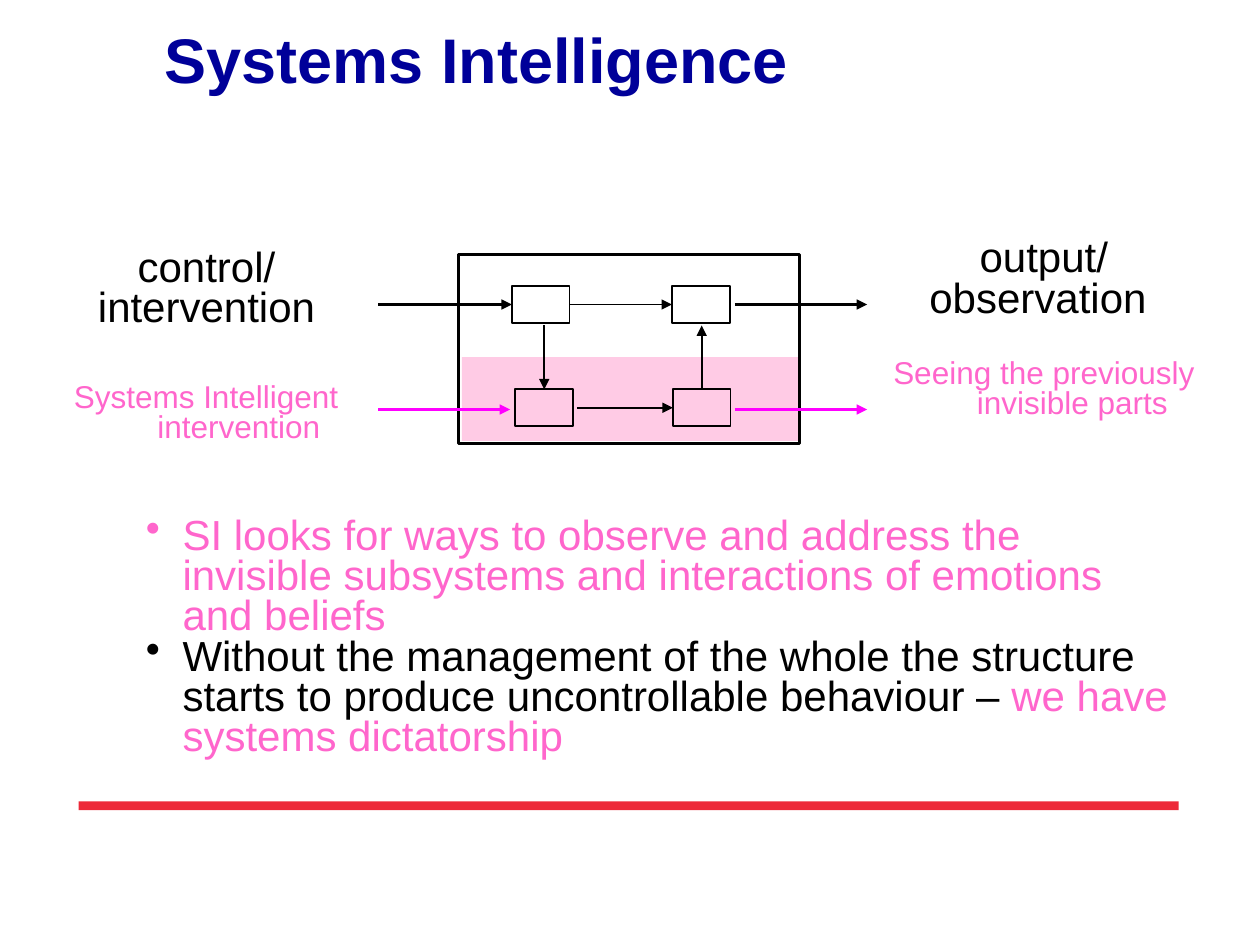
from lxml import etree
from pptx import Presentation
from pptx import util as u
from pptx.dml.color import RGBColor
from pptx.enum import shapes, text
from pptx.oxml.ns import qn

Pt = u.Pt
BLACK = RGBColor(0x00, 0x00, 0x00)
NAVY = RGBColor(0x00, 0x00, 0x99)
PINK = RGBColor(0xFF, 0x66, 0xCC)
PALE_PINK = RGBColor(0xFF, 0x99, 0xCC)
MAGENTA = RGBColor(0xFF, 0x00, 0xFF)
RED = RGBColor(0xED, 0x29, 0x39)
FONT = "Arial"
TOP, LEFT, BOTTOM, RIGHT = range(4)


def add_rectangle(page, place, fill=None, opacity=None, line_width=None):
    box = page.shapes.add_shape(shapes.MSO_SHAPE.RECTANGLE, *map(Pt, place))
    box.shadow.inherit = False
    if fill is None:
        box.fill.background()
    else:
        box.fill.solid()
        box.fill.fore_color.rgb = fill
    if opacity is not None:
        color = box._element.spPr.find(qn("a:solidFill"))[0]
        etree.SubElement(color, qn("a:alpha"), val=str(opacity * 1000))
    if line_width is None:
        box.line.fill.background()
    else:
        box.line.color.rgb = BLACK
        box.line.width = Pt(line_width)
    return box


def add_arrow(page, start, end, width=1, color=BLACK, begin=None, finish=None):
    """begin and finish are optional (box, side) pairs to join."""
    arrow = page.shapes.add_connector(
        shapes.MSO_CONNECTOR.STRAIGHT, *map(Pt, start + end))
    arrow.line.color.rgb = color
    arrow.line.width = Pt(width)
    if begin:
        arrow.begin_connect(*begin)
    if finish:
        arrow.end_connect(*finish)
    etree.SubElement(arrow.line._get_or_add_ln(), qn("a:tailEnd"), type="triangle")
    etree.SubElement(arrow._element.spPr, qn("a:effectLst"))


def add_text(page, place, paragraphs, indent=0, margin=(6.8, 3.6), bullet=None,
             bold=False, **layout):
    """Each paragraph is a list of (words, size, color) spans."""
    box = page.shapes.add_textbox(*map(Pt, place))
    frame = box.text_frame
    across, down = map(Pt, margin)
    frame_format = dict(word_wrap=True, margin_left=across, margin_right=across,
                        margin_top=down, margin_bottom=down)
    for name, value in frame_format.items():
        setattr(frame, name, value)
    for index, spans in enumerate(paragraphs):
        para = frame.add_paragraph() if index else frame.paragraphs[0]
        for name, value in layout.items():
            setattr(para, name, value)
        properties = para._p.get_or_add_pPr()
        properties.set("marL", str(Pt(indent)))
        properties.set("indent", str(-Pt(indent)))
        if bullet:
            etree.SubElement(properties, qn("a:buChar"), char=bullet)
        for words, size, color in spans:
            span = para.add_run()
            span.text = words
            span.font.color.rgb = color
            for name, value in dict(name=FONT, size=Pt(size), bold=bold).items():
                setattr(span.font, name, value)
    return box


def add_label(page, place, paragraphs):
    return add_text(page, place, paragraphs, indent=37.5, line_spacing=0.8,
                    alignment=text.PP_ALIGN.CENTER)


def add_diagram(page):
    # System frame with its invisible lower half
    add_rectangle(page, (264, 204, 192, 48), fill=PALE_PINK, opacity=50)
    add_rectangle(page, (262, 145.5, 195, 108), line_width=1.5)

    # Subsystems
    corners = [(292.5, 163.5), (384, 163.5), (294.5, 222.5), (384.5, 222.5)]
    upper_left, upper_right, lower_left, lower_right = [
        add_rectangle(page, corner + (33, 21), line_width=1) for corner in corners]

    # Interactions inside the system
    add_arrow(page, (325.5, 174), (384, 174),
              begin=(upper_left, RIGHT), finish=(upper_right, LEFT))
    add_arrow(page, (330, 233), (384.5, 233), finish=(lower_right, LEFT))
    add_arrow(page, (311, 186), (311, 222.5), finish=(lower_left, TOP))
    add_arrow(page, (401, 222.5), (401, 186), begin=(lower_right, TOP))

    # Inputs and outputs
    add_arrow(page, (216, 174), (292.5, 174), 1.5, finish=(upper_left, LEFT))
    add_arrow(page, (420, 174), (495.5, 174), 1.5)
    for start in (216, 420):
        add_arrow(page, (start, 234), (start + 75.5, 234), 1.5, MAGENTA)


def main():
    deck = Presentation()
    deck.slide_width, deck.slide_height = Pt(720), Pt(540)
    page = deck.slides.add_slide(deck.slide_layouts[6])

    # Footer bar and title
    add_rectangle(page, (45, 458, 628.5, 5), fill=RED)
    add_text(page, (94.25, 12, 555, 111), [[("Systems Intelligence", 36, NAVY)]],
             margin=(0, 0), bold=True)

    add_diagram(page)

    # Labels beside the system
    add_label(page, (31, 139.5, 174, 42),
              [[("control/", 24, BLACK)], [("intervention", 24, BLACK)]])
    add_label(page, (0, 216, 235.5, 42),
              [[("Systems Intelligent intervention", 18, PINK)]])
    output = add_label(page, (473, 134, 247, 96.5), [
        [("output/", 24, BLACK)],
        [("observation ", 24, BLACK)],
        [("Seeing the previously invisible parts ", 18, PINK)]])
    output.text_frame.paragraphs[-1].space_before = Pt(22)

    # Conclusions
    add_text(page, (76.5, 292.5, 600, 164), [
        [("SI looks for ways to observe and address the invisible subsystems "
          "and interactions of emotions and beliefs", 24, PINK)],
        [("Without the management of the whole the structure starts to produce "
          "uncontrollable behaviour – ", 24, BLACK),
         ("we have systems dictatorship", 24, PINK)],
    ], indent=21, bullet="•", line_spacing=0.8)

    deck.save("out.pptx")


if __name__ == "__main__":
    main()
